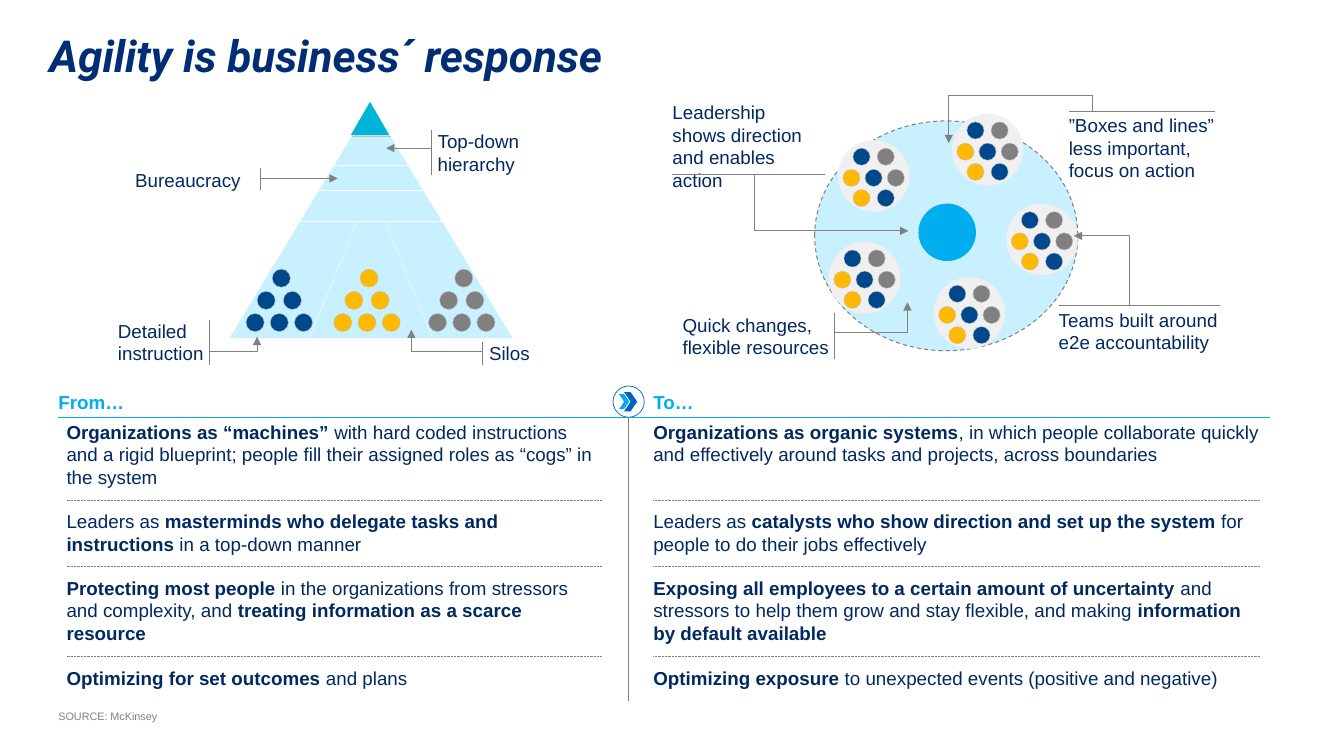
from lxml import etree
from pptx import Presentation
from pptx.dml.color import RGBColor
from pptx.enum.dml import MSO_LINE_DASH_STYLE as Dash
from pptx.enum.shapes import MSO_CONNECTOR as Connector, MSO_SHAPE as Preset
from pptx.enum.text import MSO_ANCHOR as Anchor
from pptx.oxml.ns import qn
from pptx.util import Inches, Pt

COLORS = {
    "title": "002D74", "text": "002960", "sky": "00ADEF", "blue": "0065BD",
    "navy": "00488C", "gold": "FFB900", "gray": "808080", "silver": "BFBFBF",
    "pale": "C9F0FF", "cloud": "F0F0F0", "teal": "00B4D7", "white": "FFFFFF",
}
CELL = Inches(0.1)


def grid(*cells):
    return [round(cell * CELL) for cell in cells]


def write(frame, text, font="Arial", size=13.4, color="text", bold=False, italic=False):
    for index, line in enumerate(text.split("\n")):
        paragraph = frame.paragraphs[0] if index == 0 else frame.add_paragraph()
        for part, words in enumerate(line.split("**")):
            if not words:
                continue
            run = paragraph.add_run()
            run.text = words
            run.font.name = font
            run.font.size = Pt(size)
            run.font.bold = bold or part % 2 == 1
            run.font.italic = italic
            run.font.color.rgb = RGBColor.from_string(COLORS[color])


class Canvas:
    def __init__(self, slide):
        self.slide = slide
        self.shapes = slide.shapes

    def stroke(self, shape, color, width, dash=None, arrow=False):
        shape.line.color.rgb = RGBColor.from_string(COLORS[color])
        shape.line.width = Pt(width)
        if dash:
            shape.line.dash_style = dash
        if arrow:
            properties = shape.line._get_or_add_ln()
            etree.SubElement(properties, qn("a:tailEnd"), type="triangle")

    def text(self, left, top, width, height, text, anchor=Anchor.TOP, **style):
        box = self.shapes.add_textbox(*grid(left, top, width, height))
        frame = box.text_frame
        frame.word_wrap = True
        frame.vertical_anchor = anchor
        frame.margin_left = frame.margin_right = 0
        frame.margin_top = frame.margin_bottom = 0
        write(frame, text, **style)

    def shape(self, preset, left, top, width, height, fill=None, line=None,
              weight=0.25, dash=None):
        shape = self.shapes.add_shape(preset, *grid(left, top, width, height))
        shape.shadow.inherit = False
        if fill:
            shape.fill.solid()
            shape.fill.fore_color.rgb = RGBColor.from_string(COLORS[fill])
        else:
            shape.fill.background()
        if line:
            self.stroke(shape, line, weight, dash)
        else:
            shape.line.fill.background()

    def line(self, start, end, color="gray", weight=0.75, dash=None, arrow=False):
        connector = self.shapes.add_connector(Connector.STRAIGHT, *grid(*start, *end))
        etree.SubElement(connector._element.spPr, qn("a:effectLst"))
        self.stroke(connector, color, weight, dash, arrow)

    def elbow(self, *points):
        start, *others = [grid(*point) for point in points]
        builder = self.shapes.build_freeform(*start)
        builder.add_line_segments(others, close=False)
        shape = builder.convert_to_shape()
        shape.shadow.inherit = False
        shape.fill.background()
        self.stroke(shape, "gray", 0.75, arrow=True)

    def dot(self, left, top, size, color):
        self.shape(Preset.OVAL, left, top, size, size, color, "silver")

    def team(self, left, top):
        self.shape(Preset.OVAL, left, top, 7.1, 7.1, "cloud")
        for across, down, color in TEAM_DOTS:
            self.dot(left + across, top + down, 1.7, color)

    def pile(self, left, color):
        for row, offsets in enumerate(PILE_ROWS):
            for offset in offsets:
                self.dot(left + offset, 26.7 + 2.2 * row, 1.8, color)


TEAM_DOTS = [
    (3.9, 4.9, "navy"), (1.5, 0.8, "navy"), (3.9, 0.8, "gray"), (0.5, 2.9, "gold"),
    (2.7, 2.9, "navy"), (4.9, 2.9, "gray"), (1.5, 4.9, "gold"),
]
TEAMS = [(82.2, 24), (92.6, 27.5), (99.8, 20.2), (83.1, 13.9), (94.4, 11.3)]
PILE_ROWS = [(0,), (-1.5, 1.1), (-2.6, -0.2, 2.2)]
PILES = [(27, "navy"), (35.7, "gold"), (45.1, "gray")]

LABELS = [
    (67.7, 31.1, 14.9, 4.5, "Quick changes, flexible resources"),
    (66.7, 10, 15, 9, "Leadership shows direction and enables action"),
    (106, 11.3, 14.8, 6.8, "”Boxes and lines” less important, focus on action"),
    (105, 30.6, 16.2, 4.5, "Teams built around e2e accountability"),
    (43.4, 12.9, 9.1, 4.5, "Top-down hierarchy"),
    (11.7, 31.7, 9, 4.5, "Detailed\ninstruction"),
    (48.5, 33.9, 5.1, 2.3, "Silos"),
    (13.4, 16.7, 11.8, 2.3, "Bureaucracy"),
]
LABEL_BARS = [
    ((106, 11.1), (120.5, 11.1)), ((105, 30.3), (121, 30.3)),
    ((82.8, 31.1), (82.8, 35.6)), ((66.7, 17.3), (81.8, 17.3)),
    ((20.8, 31.7), (20.8, 36.2)), ((25.8, 16.7), (25.8, 18.9)),
    ((42.8, 12.9), (42.8, 17.4)), ((47.9, 33.9), (47.9, 36.2)),
]
ELBOWS = [
    [(112, 30.4), (112, 23.4), (106.5, 23.4)],
    [(74.8, 17.4), (74.8, 22.9), (90.1, 22.9)],
    [(82.8, 33), (90, 33), (90, 30)],
    [(108.4, 11.1), (108.4, 9.5), (94.1, 9.5), (94.1, 14.2)],
    [(20.8, 34.9), (25.5, 34.9), (25.5, 33.4)],
    [(47.9, 34.9), (40.8, 34.9), (40.8, 32.7)],
]
COMPARISON = [
    (41.7, 6.8,
     "**Organizations as “machines” **with hard coded instructions and a rigid blueprint; "
     "people fill their assigned roles as “cogs” in the\u00a0system",
     "**Organizations as organic systems**, in which people collaborate quickly and "
     "effectively around tasks and projects, across boundaries"),
    (50.6, 4.5,
     "Leaders as **masterminds who delegate tasks and instructions **in a top-down manner",
     "Leaders as **catalysts who show direction and set up the system** for people to do "
     "their jobs effectively"),
    (57.2, 6.8,
     "**Protecting most people **in the organizations from stressors and complexity, and "
     "**treating information as a scarce resource**",
     "**Exposing all employees to a certain amount of uncertainty **and stressors to help "
     "them grow and stay flexible, and making **information by default available**"),
    (66.1, 2.3,
     "**Optimizing for set outcomes **and plans",
     "**Optimizing exposure **to unexpected events (positive and negative)"),
]


def draw_network(canvas):
    canvas.shape(Preset.OVAL, 80.8, 12, 26.1, 22.8, "pale", "gray", 0.75, Dash.DASH)
    for left, top in TEAMS:
        canvas.team(left, top)
    canvas.shape(Preset.OVAL, 91.1, 20.2, 5.7, 5.7, "sky")


def draw_pyramid(canvas):
    left, top, width, height = 22.7, 10.3, 28.2, 23.3
    center = left + width / 2
    canvas.shape(Preset.ISOSCELES_TRIANGLE, left, top, width, height, "pale", "white")
    for level, color in [(13.5, "silver"), (16.4, "white"), (18.9, "white"), (21.9, "white")]:
        reach = width / 2 * (level - top) / height
        canvas.line((center - reach, level), (center + reach, level), color, 0.25)
    for side in (-1, 1):
        canvas.line((center + 6.1 * side, 33.5), (center + 1.35 * side, 21.9), "white", 0.25)
    for pile_left, color in PILES:
        canvas.pile(pile_left, color)
    canvas.shape(Preset.ISOSCELES_TRIANGLE, 34.8, 10.1, 3.8, 3.3, "teal")


def draw_labels(canvas):
    for label in LABELS:
        canvas.text(*label)
    for points in ELBOWS:
        canvas.elbow(*points)
    canvas.line((25.8, 17.7), (33.5, 17.7), arrow=True)
    canvas.line((42.8, 14.7), (38.3, 14.7), arrow=True)
    for start, end in LABEL_BARS:
        canvas.line(start, end)


def draw_comparison(canvas):
    for top, height, before, after in COMPARISON:
        canvas.text(6.6, top, 53.1, height, before)
        canvas.text(64.8, top, 60.3, height, after)
        if top > COMPARISON[0][0]:
            for left, right in [(6.6, 59.7), (64.8, 124.9)]:
                canvas.line((left, top - 1), (right, top - 1), weight=0.5, dash=Dash.ROUND_DOT)
    for left, heading in [(5.8, "From…"), (64.8, "To…")]:
        canvas.text(left, 38.8, 53, 2.3, heading, color="sky", bold=True)
    canvas.shape(Preset.OVAL, 60.8, 38.3, 3.1, 3.1, line="blue", weight=0.5)
    canvas.shape(Preset.CHEVRON, 61.9, 38.9, 1.3, 1.9, "blue")
    canvas.shape(Preset.CHEVRON, 61.4, 39.1, 1, 1.5, "sky")
    canvas.line((62.3, 41.4), (62.3, 69.5), weight=0.5)
    canvas.line((5.8, 41.4), (126, 41.4), "sky")


def main():
    presentation = Presentation()
    presentation.slide_width = Inches(13.33)
    presentation.slide_height = Inches(7.5)
    canvas = Canvas(presentation.slides.add_slide(presentation.slide_layouts[6]))
    canvas.text(4.9, 2.8, 65.6, 7.3, "Agility is business´ response", font="Roboto",
                size=31.5, color="title", bold=True, italic=True)
    canvas.text(5.8, 70.4, 75.3, 1.3, "SOURCE: McKinsey", anchor=Anchor.BOTTOM,
                size=7.7, color="gray")
    draw_network(canvas)
    draw_pyramid(canvas)
    draw_labels(canvas)
    draw_comparison(canvas)
    presentation.save("out.pptx")


if __name__ == "__main__":
    main()
